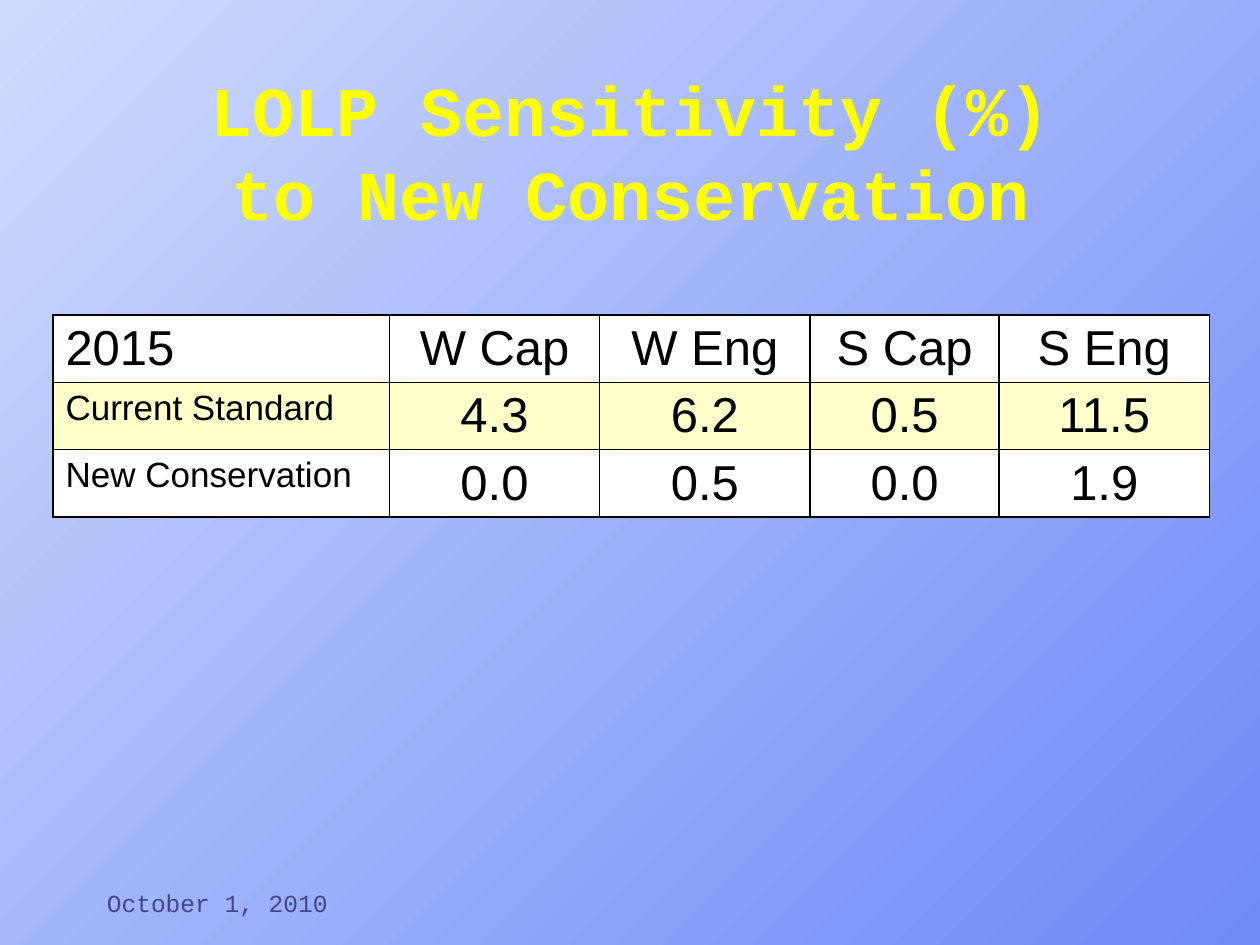
from dataclasses import dataclass

from lxml import etree
from pptx import Presentation
from pptx.dml.color import RGBColor
from pptx.enum.text import MSO_ANCHOR, MSO_AUTO_SIZE, PP_ALIGN
from pptx.oxml.ns import qn
from pptx.util import Inches, Pt

LEFT, CENTER = PP_ALIGN.LEFT, PP_ALIGN.CENTER
BOTTOM = MSO_ANCHOR.BOTTOM
NO_AUTOFIT = MSO_AUTO_SIZE.NONE
TITLE_ONLY = 5


@dataclass(frozen=True)
class Theme:
    heading_font: str = "Courier New"
    table_font: str = "Arial"
    bg_start: str = "CFDBFD"
    bg_end: str = "6F89F7"
    title: str = "FFFF00"
    date: str = "40458C"
    ink: str = "000000"
    plain_row: str = "FFFFFF"
    standard_row: str = "FFFFCC"
    title_size: int = 40
    value_size: int = 28
    label_size: int = 20
    date_size: int = 14


THEME = Theme()

LOLP_ROWS = [
    ["2015", "W Cap", "W Eng", "S Cap", "S Eng"],
    ["Current Standard", "4.3", "6.2", "0.5", "11.5"],
    ["New Conservation", "0.0", "0.5", "0.0", "1.9"],
]
COLUMN_WIDTHS = [2.67, 1.67, 1.67, 1.5, 1.67]
ROW_HEIGHT = 0.53


def rgb(color):
    return RGBColor.from_string(color)


def write(frame, text, font, size, color, align=LEFT, bold=False):
    frame.text = text
    for paragraph in frame.paragraphs:
        paragraph.alignment = align
        for run in paragraph.runs:
            run.font.name = font
            run.font.size = Pt(size)
            run.font.bold = bold
            run.font.color.rgb = rgb(color)


def paint_background(slide):
    fill = slide.background.fill
    fill.gradient()
    fill.gradient_angle = 315  # counter-clockwise: top left to bottom right
    for stop, color in zip(fill.gradient_stops, (THEME.bg_start, THEME.bg_end)):
        stop.color.rgb = rgb(color)


def place_title(slide, text):
    title = slide.shapes.title
    title.left, title.top = Inches(0.75), Inches(0.33)
    title.width, title.height = Inches(8.5), Inches(1.58)
    frame = title.text_frame
    frame.auto_size = NO_AUTOFIT
    frame.vertical_anchor = BOTTOM
    write(frame, text, THEME.heading_font, THEME.title_size, THEME.title,
          CENTER, bold=True)


def add_borders(cell):
    properties = cell._tc.get_or_add_tcPr()
    for position, side in enumerate(("lnL", "lnR", "lnT", "lnB")):
        line = etree.Element(qn(f"a:{side}"), w=str(Pt(1)))
        solid = etree.SubElement(line, qn("a:solidFill"))
        etree.SubElement(solid, qn("a:srgbClr"), val=THEME.ink)
        properties.insert(position, line)  # borders precede the fill


def add_lolp_table(slide, rows):
    table = slide.shapes.add_table(
        len(rows), len(COLUMN_WIDTHS), Inches(0.42), Inches(2.5),
        Inches(sum(COLUMN_WIDTHS)), Inches(ROW_HEIGHT * len(rows))).table
    table.first_row = table.horz_banding = False
    for column, width in zip(table.columns, COLUMN_WIDTHS):
        column.width = Inches(width)
    for r, values in enumerate(rows):
        table.rows[r].height = Inches(ROW_HEIGHT)
        for c, value in enumerate(values):
            cell = table.cell(r, c)
            cell.fill.solid()
            cell.fill.fore_color.rgb = rgb(
                THEME.standard_row if r == 1 else THEME.plain_row)
            is_row_label = r > 0 and c == 0
            write(cell.text_frame, value, THEME.table_font,
                  THEME.label_size if is_row_label else THEME.value_size,
                  THEME.ink, CENTER if c else LEFT)
            add_borders(cell)


def add_date(slide, text):
    frame = slide.shapes.add_textbox(
        Inches(0.75), Inches(6.83), Inches(2.08), Inches(0.5)).text_frame
    frame.word_wrap = True
    frame.vertical_anchor = BOTTOM
    write(frame, text, THEME.heading_font, THEME.date_size, THEME.date)


def main():
    deck = Presentation()
    deck.slide_width, deck.slide_height = Inches(10), Inches(7.5)
    slide = deck.slides.add_slide(deck.slide_layouts[TITLE_ONLY])
    paint_background(slide)
    # Title, with a line break inside one paragraph
    place_title(slide, "LOLP Sensitivity (%)\vto New Conservation")
    # Results and date
    add_lolp_table(slide, LOLP_ROWS)
    add_date(slide, "October 1, 2010")
    deck.save("out.pptx")


if __name__ == "__main__":
    main()
